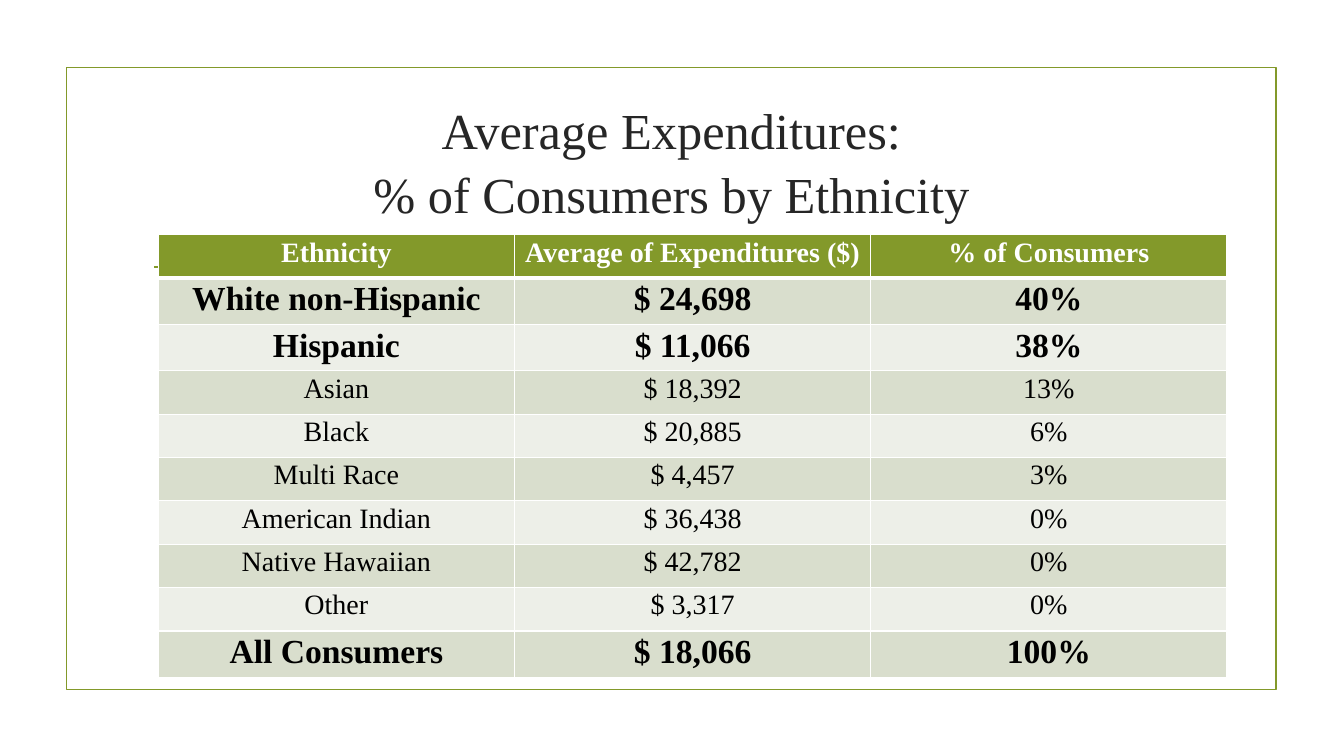
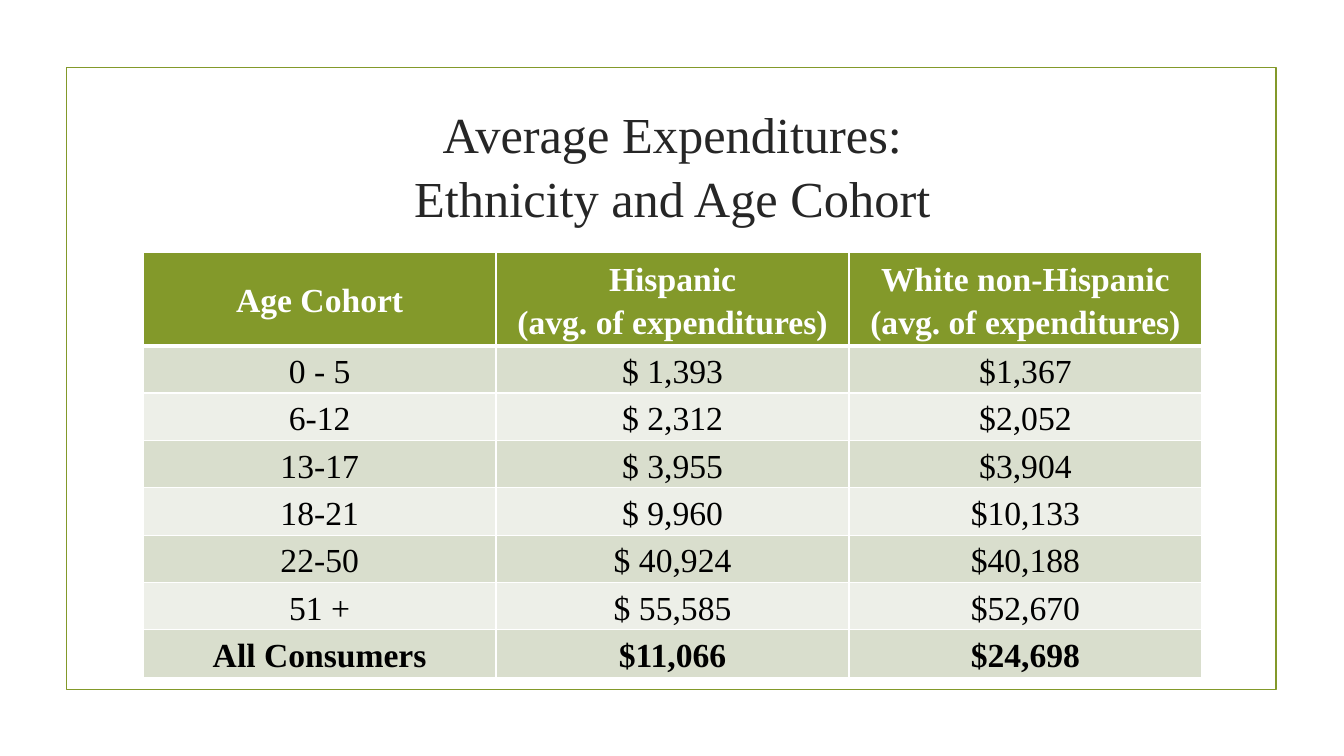
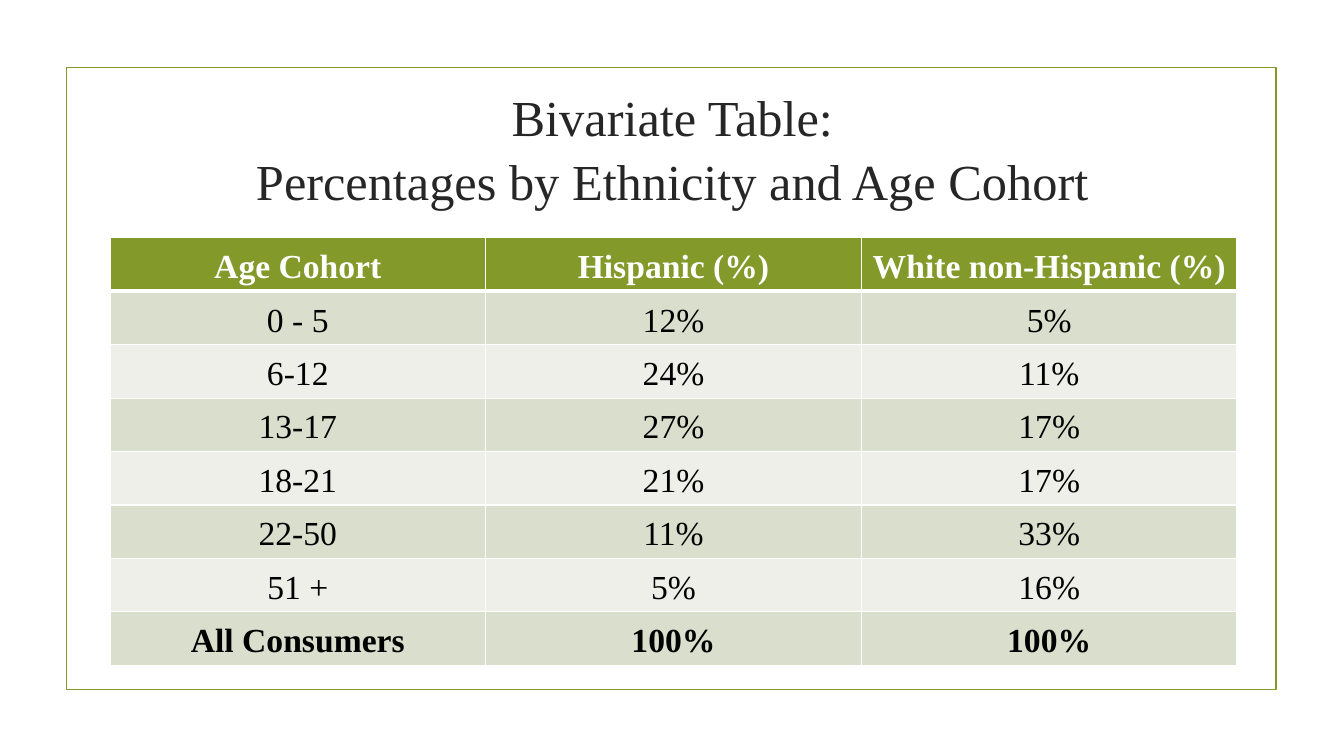
from dataclasses import dataclass

from lxml.etree import SubElement
from pptx import Presentation
from pptx.dml.color import RGBColor
from pptx.enum.shapes import MSO_CONNECTOR as Connector, MSO_SHAPE as Shape
from pptx.enum.text import MSO_ANCHOR as Anchor, MSO_AUTO_SIZE as AutoSize, PP_ALIGN as Align
from pptx.oxml import parse_xml
from pptx.oxml.ns import nsdecls, qn
from pptx.util import Inches, Pt

COLORS = {
    "accent": "83992A",
    "title": "262626",
    "text": "000000",
    "white": "FFFFFF",
    "dark_band": "D9DECD",
    "light_band": "EDEFE8",
}
FONT = "Times New Roman"


@dataclass
class TableStyle:
    header_size: int
    body_size: int
    strong_size: int
    line_spacing: float
    space_after: int
    anchor: Anchor


ETHNICITY_STYLE = TableStyle(20, 20, 24, 1.07, 8, Anchor.TOP)
COHORT_STYLE = TableStyle(24, 24, 24, 1.15, 0, Anchor.MIDDLE)

ETHNICITY_ROWS = [
    ("Ethnicity", "Average of Expenditures ($)", "% of Consumers"),
    ("White non-Hispanic", "$ 24,698", "40%"),
    ("Hispanic", "$ 11,066", "38%"),
    ("Asian", "$ 18,392", "13%"),
    ("Black", "$ 20,885", "6%"),
    ("Multi Race", "$ 4,457", "3%"),
    ("American Indian", "$ 36,438", "0%"),
    ("Native Hawaiian", "$ 42,782", "0%"),
    ("Other", "$ 3,317", "0%"),
    ("All Consumers", "$ 18,066", "100%"),
]
AGE_COHORTS = ("0 - 5", "6-12", "13-17", "18-21", "22-50", "51 +", "All Consumers")
HISPANIC_AVERAGES = (
    "$ 1,393", "$ 2,312", "$ 3,955", "$ 9,960", "$ 40,924", "$ 55,585", "$11,066",
)
WHITE_AVERAGES = (
    "$1,367", "$2,052", "$3,904", "$10,133", "$40,188", "$52,670", "$24,698",
)
HISPANIC_SHARES = ("12%", "24%", "27%", "21%", "11%", "5%", "100%")
WHITE_SHARES = ("5%", "11%", "17%", "17%", "33%", "16%", "100%")

AVERAGE_ROWS = [
    ("Age Cohort", "Hispanic\n(avg. of expenditures)", "White non-Hispanic\n(avg. of expenditures)"),
    *zip(AGE_COHORTS, HISPANIC_AVERAGES, WHITE_AVERAGES),
]
SHARE_ROWS = [
    ("Age Cohort", "Hispanic (%)", "White non-Hispanic (%)"),
    *zip(AGE_COHORTS, HISPANIC_SHARES, WHITE_SHARES),
]


def color(name):
    return RGBColor.from_string(COLORS[name])


def add_run(paragraph, text, size, color_name, bold=False):
    run = paragraph.add_run()
    run.text = text
    run.font.name = FONT
    run.font.size = Pt(size)
    run.font.bold = bold
    run.font.color.rgb = color(color_name)


def decorate_layout(layout, slide):
    frame = slide.shapes.add_shape(
        Shape.RECTANGLE, Inches(0.66), Inches(0.67), Inches(12), Inches(6.17)
    )
    frame.shadow.inherit = False
    frame.fill.background()
    rule = slide.shapes.add_connector(
        Connector.STRAIGHT, Inches(1.53), Inches(2.65), Inches(11.81), Inches(2.65)
    )
    for index, shape in enumerate((frame, rule), start=2):
        shape.line.color.rgb = color("accent")
        shape.line.width = Pt(1.25)
        layout.shapes.element.insert(index, shape.element)
    SubElement(rule.element.spPr, qn("a:effectLst"))


def place_title(slide, box, lines):
    title = slide.shapes.title
    title.left, title.top, title.width, title.height = map(Inches, box)
    text_frame = title.text_frame
    text_frame.word_wrap = True
    text_frame.auto_size = AutoSize.NONE
    text_frame.vertical_anchor = Anchor.MIDDLE
    paragraph = text_frame.paragraphs[0]
    paragraph.alignment = Align.CENTER
    paragraph.line_spacing = 1.05
    for index, line in enumerate(lines):
        if index:
            paragraph.add_line_break()
        add_run(paragraph, line, 36, "title")


def set_borders(cell, top, bottom):
    properties = cell._tc.get_or_add_tcPr()
    widths = {"lnL": 1, "lnR": 1, "lnT": top, "lnB": bottom}
    for index, (side, width) in enumerate(widths.items()):
        border = parse_xml(
            f'<a:{side} {nsdecls("a")} w="{Pt(width)}"><a:solidFill>'
            f'<a:srgbClr val="{COLORS["white"]}"/></a:solidFill></a:{side}>'
        )
        properties.insert(index, border)


def fill_cell(cell, text, style, size, color_name, bold):
    cell.margin_left = cell.margin_right = Inches(0.07)
    cell.margin_top = cell.margin_bottom = 0
    cell.vertical_anchor = style.anchor
    for index, line in enumerate(text.split("\n")):
        text_frame = cell.text_frame
        paragraph = text_frame.add_paragraph() if index else text_frame.paragraphs[0]
        paragraph.alignment = Align.CENTER
        paragraph.line_spacing = style.line_spacing
        paragraph.space_after = Pt(style.space_after)
        add_run(paragraph, line, size, color_name, bold)


def place_table(slide, box, rows, heights, style, strong_rows):
    left, top, width, height = map(Inches, box)
    column_count = len(rows[0])
    table = slide.shapes.add_table(len(rows), column_count, left, top, width, height).table
    for column in table.columns:
        column.width = width // column_count
    for row_index, texts in enumerate(rows):
        table.rows[row_index].height = Inches(heights[row_index])
        is_header = row_index == 0
        is_strong = row_index in strong_rows
        if is_header:
            fill, size, text_color = "accent", style.header_size, "white"
        else:
            fill = "dark_band" if row_index % 2 else "light_band"
            size = style.strong_size if is_strong else style.body_size
            text_color = "text"
        for column_index, text in enumerate(texts):
            cell = table.cell(row_index, column_index)
            fill_cell(cell, text, style, size, text_color, is_header or is_strong)
            cell.fill.solid()
            cell.fill.fore_color.rgb = color(fill)
            set_borders(cell, 3 if row_index == 1 else 1, 3 if is_header else 1)


def build_ethnicity(slide):
    strong_rows = (1, 2, 9)
    heights = [0.46 if index in strong_rows else 0.43 for index in range(len(ETHNICITY_ROWS))]
    place_title(
        slide, (0.84, 0.84, 11.64, 1.49),
        ("Average Expenditures:", "% of Consumers by Ethnicity"),
    )
    place_table(
        slide, (1.57, 2.33, 10.6, 4.39), ETHNICITY_ROWS, heights, ETHNICITY_STYLE, strong_rows
    )


def build_cohorts(slide, title_box, title_lines, table_box, rows, header_height, row_height):
    place_title(slide, title_box, title_lines)
    heights = [header_height] + [row_height] * len(AGE_COHORTS)
    place_table(slide, table_box, rows, heights, COHORT_STYLE, (len(AGE_COHORTS),))


def main():
    presentation = Presentation()
    presentation.slide_width = Inches(13.33)
    presentation.slide_height = Inches(7.5)
    layout = presentation.slide_layouts.get_by_name("Title Only")
    ethnicity, averages, shares = [presentation.slides.add_slide(layout) for _ in range(3)]
    decorate_layout(layout, ethnicity)
    build_ethnicity(ethnicity)
    build_cohorts(
        averages, (1.42, 0.97, 10.5, 1.31),
        ("Average Expenditures:", "Ethnicity and Age Cohort"),
        (1.42, 2.5, 10.5, 4.19), AVERAGE_ROWS, 0.93, 0.47,
    )
    build_cohorts(
        shares, (1.42, 0.8, 10.5, 1.31),
        ("Bivariate Table:", "Percentages by Ethnicity and Age Cohort"),
        (1.09, 2.36, 11.18, 4.26), SHARE_ROWS, 0.53, 0.53,
    )
    presentation.save("out.pptx")


if __name__ == "__main__":
    main()
